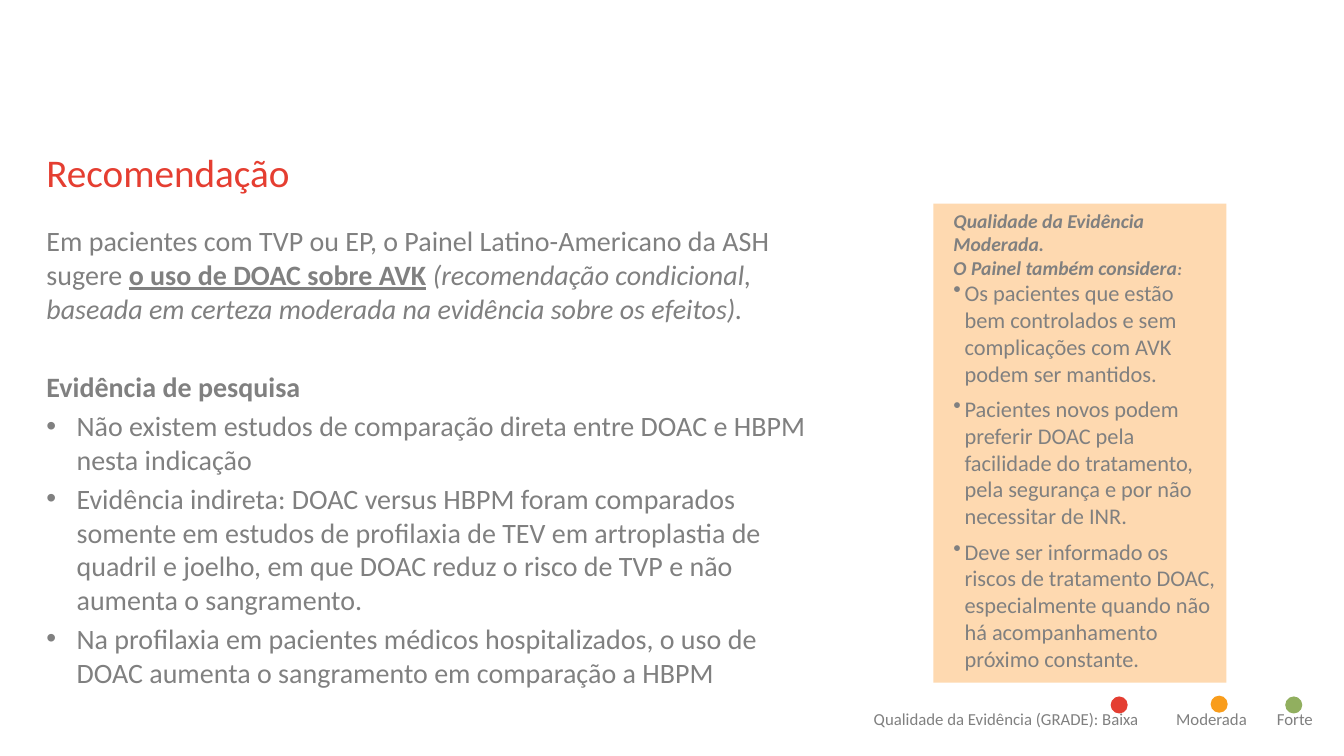
import dataclasses

import pptx
import pptx.dml.color
import pptx.enum.shapes
import pptx.enum.text
import pptx.oxml.ns
import pptx.util
from lxml import etree

Cm = pptx.util.Cm
Pt = pptx.util.Pt


@dataclasses.dataclass(frozen=True)
class Theme:
    font: str = "Calibri"
    text: str = "808080"
    title: str = "E53E31"
    panel: str = "FED9B0"
    low: str = "E43E32"
    moderate: str = "F99D1C"
    strong: str = "91AF5F"
    title_size: int = 28
    body_size: int = 20
    panel_size: int = 16
    heading_size: int = 14
    legend_size: int = 12


theme = Theme()


def write_paragraph(paragraph, runs, size, color=theme.text, indent=None):
    properties = paragraph._p.get_or_add_pPr()
    margin = Cm(indent or 0)
    properties.set("marL", str(margin))
    properties.set("indent", str(-margin))
    bullet = etree.SubElement(properties, pptx.oxml.ns.qn("a:buChar" if indent else "a:buNone"))
    if indent:
        bullet.set("char", "•")
    paragraph.alignment = pptx.enum.text.PP_ALIGN.LEFT
    for text, style in runs:
        run = paragraph.add_run()
        run.text = text
        run.font.name = theme.font
        run.font.size = Pt(size)
        run.font.color.rgb = pptx.dml.color.RGBColor.from_string(color)
        run.font.bold = "b" in style
        run.font.italic = "i" in style
        run.font.underline = "u" in style


def add_filled_shape(kind, left, top, width, height, color):
    shape = slide.shapes.add_shape(kind, Cm(left), Cm(top), Cm(width), Cm(height))
    shape.shadow.inherit = False
    shape.fill.solid()
    shape.fill.fore_color.rgb = pptx.dml.color.RGBColor.from_string(color)
    shape.line.fill.background()
    return shape


presentation = pptx.Presentation()
presentation.slide_width = Cm(33.87)
presentation.slide_height = Cm(19.05)
slide = presentation.slides.add_slide(presentation.slide_layouts[1])

title = slide.shapes.title
body = slide.placeholders[1]
for placeholder, top, width, height in ((title, 3.73, 30.48, 1.98), (body, 5.64, 19.56, 11.3)):
    placeholder.left, placeholder.top = Cm(1.17), Cm(top)
    placeholder.width, placeholder.height = Cm(width), Cm(height)
    frame = placeholder.text_frame
    frame.margin_left = frame.margin_top = frame.margin_right = frame.margin_bottom = 0
    frame.vertical_anchor = pptx.enum.text.MSO_ANCHOR.TOP
    frame.auto_size = pptx.enum.text.MSO_AUTO_SIZE.NONE
    frame.word_wrap = True

write_paragraph(title.text_frame.paragraphs[0], [("Recomendação", "")], theme.title_size, theme.title)

body_paragraphs = [
    ([("Em pacientes com TVP ou EP, o Painel Latino-Americano da ASH sugere ", ""),
      ("o uso de DOAC sobre AVK", "bu"),
      (" ", "b"),
      ("(recomendação condicional, baseada em certeza moderada na evidência sobre os efeitos).", "i")],
     None, 0),
    ([("Evidência de pesquisa", "b")], None, 32),
    ([("Não existem estudos de comparação direta entre DOAC e HBPM nesta indicação", "")], 0.76, 4),
    ([("Evidência indireta: DOAC versus HBPM foram comparados somente em estudos de profilaxia "
       "de TEV em artroplastia de quadril e joelho, em que DOAC reduz o risco de TVP e não "
       "aumenta o sangramento.", "")], 0.76, 4),
    ([("Na profilaxia em pacientes médicos hospitalizados, o uso de DOAC aumenta o sangramento "
       "em comparação a HBPM", "")], 0.76, 4),
]
for index, (runs, indent, space) in enumerate(body_paragraphs):
    paragraph = body.text_frame.paragraphs[0] if index == 0 else body.text_frame.add_paragraph()
    write_paragraph(paragraph, runs, theme.body_size, indent=indent)
    paragraph.space_before = Pt(space)

panel = add_filled_shape(pptx.enum.shapes.MSO_SHAPE.RECTANGLE, 23.52, 5.13, 7.39, 12.07, theme.panel)
frame = panel.text_frame
frame.word_wrap = True
frame.vertical_anchor = pptx.enum.text.MSO_ANCHOR.TOP
frame.margin_left = Cm(0.51)
panel_paragraphs = [
    ([("Qualidade da Evidência Moderada.", "bi")], theme.heading_size, None),
    ([("O Painel também considera", "bi"), (":", "bi")], theme.heading_size, None),
    ([("Os pacientes que estão bem controlados e sem complicações com AVK podem ser mantidos.", "")],
     theme.panel_size, 0.28),
    ([("Pacientes novos podem preferir DOAC pela facilidade do tratamento, pela segurança e por "
       "não necessitar de INR.", "")], theme.panel_size, 0.28),
    ([("Deve ser informado os riscos de tratamento DOAC, especialmente quando não há "
       "acompanhamento próximo constante.", "")], theme.panel_size, 0.28),
]
for index, (runs, size, indent) in enumerate(panel_paragraphs):
    paragraph = frame.paragraphs[0] if index == 0 else frame.add_paragraph()
    write_paragraph(paragraph, runs, size, indent=indent)
    paragraph.space_after = Pt(6 if indent else 0)
frame.paragraphs[1].runs[1].font.size = Pt(theme.legend_size)

legend = slide.shapes.add_textbox(Cm(21.77), Cm(17.53), Cm(12.09), Cm(1.02))
legend.text_frame.word_wrap = True
legend.text_frame.margin_top = Cm(0.33)
paragraph = legend.text_frame.paragraphs[0]
write_paragraph(paragraph, [("Qualidade da Evidência (GRADE): Baixa\tModerada\tForte", "")], theme.legend_size)
tabs = etree.SubElement(paragraph._p.pPr, pptx.oxml.ns.qn("a:tabLst"))
for position in (7.42, 10.24):
    etree.SubElement(tabs, pptx.oxml.ns.qn("a:tab"), pos=str(Cm(position)), algn="l")

for left, top, color in (
    (27.99, 17.55, theme.low),
    (30.51, 17.53, theme.moderate),
    (32.39, 17.55, theme.strong),
):
    add_filled_shape(pptx.enum.shapes.MSO_SHAPE.OVAL, left, top, 0.43, 0.43, color)

presentation.save("out.pptx")
